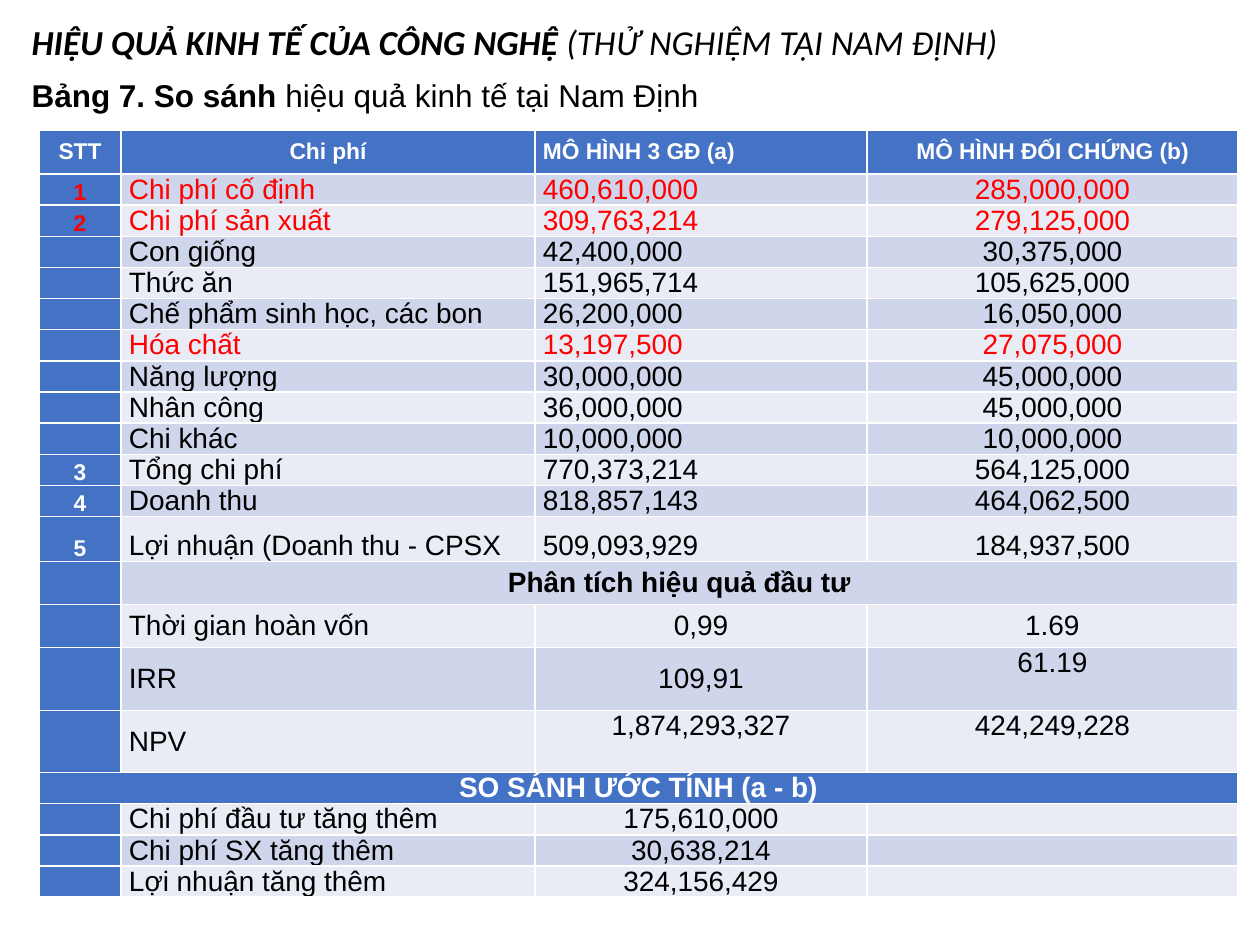
"""Builds the slide comparing the economic efficiency of two farming models."""
from lxml import etree
from pptx import Presentation
from pptx.dml.color import RGBColor
from pptx.enum.text import MSO_ANCHOR, MSO_AUTO_SIZE, PP_ALIGN
from pptx.oxml.ns import qn
from pptx.util import Emu, Pt

TOP, MIDDLE, BOTTOM = MSO_ANCHOR.TOP, MSO_ANCHOR.MIDDLE, MSO_ANCHOR.BOTTOM
LEFT, CENTER = PP_ALIGN.LEFT, PP_ALIGN.CENTER
PX = 914400 / 126
COLORS = {"black": "000000", "white": "FFFFFF", "red": "FF0000",
          "blue": "4472C4", "odd": "CFD5EA", "even": "E9EBF5"}

HEADINGS = [
    ("Calibri", 20, True, "HIỆU QUẢ KINH TẾ CỦA CÔNG NGHỆ ", "(THỬ NGHIỆM TẠI NAM ĐỊNH)"),
    ("Arial", 18, False, "Bảng 7. So sánh ", "hiệu quả kinh tế tại Nam Định"),
]
HEADER = ("STT", "Chi phí", "MÔ HÌNH 3 GĐ (a)", "MÔ HÌNH ĐỐI CHỨNG (b)")
COSTS = [
    ("1", "Chi phí cố định", "460,610,000", "285,000,000"),
    ("2", "Chi phí sản xuất", "309,763,214", "279,125,000"),
    ("", "Con giống", "42,400,000", "30,375,000"),
    ("", "Thức ăn", "151,965,714", "105,625,000"),
    ("", "Chế phẩm sinh học, các bon", "26,200,000", "16,050,000"),
    ("", "Hóa chất", "13,197,500", "27,075,000"),
    ("", "Năng lượng", "30,000,000", "45,000,000"),
    ("", "Nhân công", "36,000,000", "45,000,000"),
    ("", "Chi khác", "10,000,000", "10,000,000"),
    ("3", "Tổng chi phí", "770,373,214", "564,125,000"),
    ("4", "Doanh thu", "818,857,143", "464,062,500"),
    ("5", "Lợi nhuận (Doanh thu - CPSX", "509,093,929", "184,937,500"),
]
INVESTMENT = [
    ("", "Phân tích hiệu quả đầu tư", "", ""),
    ("", "Thời gian hoàn vốn", "0,99", "1.69"),
    ("", "IRR", "109,91", "61.19"),
    ("", "NPV", "1,874,293,327", "424,249,228"),
]
COMPARISON = [
    ("SO SÁNH ƯỚC TÍNH (a - b)", "", "", ""),
    ("", "Chi phí đầu tư tăng thêm", "175,610,000", ""),
    ("", "Chi phí SX tăng thêm", "30,638,214", ""),
    ("", "Lợi nhuận tăng thêm", "324,156,429", ""),
]
ROWS = [HEADER] + COSTS + INVESTMENT + COMPARISON
INVESTMENT_ROW = 1 + len(COSTS)
COMPARISON_ROW = INVESTMENT_ROW + len(INVESTMENT)
RED_LABELS = {"Chi phí cố định", "Chi phí sản xuất", "Hóa chất"}
TOP_VALUES = {"61.19", "1,874,293,327", "424,249,228"}
COLUMN_WIDTHS = [82, 414, 332, 371]
ROW_HEIGHTS = [44] + [31] * 11 + [45, 43, 43, 63, 62] + [31] * 4


def px(length):
    return Emu(round(length * PX))


def color(name):
    return RGBColor.from_string(COLORS[name])


def style_span(span, font, size, tone, bold, italic=False):
    span.font.name = font
    span.font.size = Pt(size)
    span.font.color.rgb = color(tone)
    span.font.bold = bold
    span.font.italic = italic


def add_headings(page):
    title = page.shapes.title
    title.element.getparent().remove(title.element)
    box = page.placeholders[1]
    box.left, box.top, box.width, box.height = px(19), px(19), px(1220), px(223)
    frame = box.text_frame
    frame.word_wrap = True
    frame.auto_size = MSO_AUTO_SIZE.NONE
    frame.vertical_anchor = TOP
    for index, (font, size, italic, strong, plain) in enumerate(HEADINGS):
        para = frame.add_paragraph() if index else frame.paragraphs[0]
        para.line_spacing = 0.9
        para.space_before = Pt(10)
        for text, bold in ((strong, True), (plain, False)):
            span = para.add_run()
            span.text = text
            style_span(span, font, size, "black", bold, italic)
        properties = para._p.get_or_add_pPr()
        properties.set("marL", "0")
        properties.set("indent", "0")
        etree.SubElement(properties, qn("a:buNone"))


def fill_cell(cell, row, column):
    text = ROWS[row][column]
    header, banner = row == 0, row == COMPARISON_ROW
    section = row == INVESTMENT_ROW
    on_blue = header or banner or column == 0
    cell.fill.solid()
    cell.fill.fore_color.rgb = color("blue" if on_blue else "odd" if row % 2 else "even")
    cell.margin_left = cell.margin_right = px(8)
    cell.margin_top = cell.margin_bottom = 0
    middle = header or INVESTMENT_ROW <= row < COMPARISON_ROW
    cell.vertical_anchor = TOP if text in TOP_VALUES else MIDDLE if middle else BOTTOM

    para = cell.text_frame.paragraphs[0]
    if not text:
        etree.SubElement(para._p, qn("a:endParaRPr")).set("sz", "1300")
        return
    para.text = text
    label = column == 1 and not header and not section
    first_model = column == 2 and row < INVESTMENT_ROW
    para.alignment = LEFT if label or first_model else CENTER
    tone = "red" if ROWS[row][1] in RED_LABELS else "white" if on_blue else "black"
    small = header or (column == 0 and not banner)
    style_span(para.runs[0], "Arial", 13 if small else 16, tone, on_blue or section)


def add_comparison_table(page):
    table = page.shapes.add_table(len(ROWS), len(HEADER), px(39), px(130),
                                  px(sum(COLUMN_WIDTHS)), px(sum(ROW_HEIGHTS))).table
    for column, width in zip(table.columns, COLUMN_WIDTHS):
        column.width = px(width)
    for row, height in zip(table.rows, ROW_HEIGHTS):
        row.height = px(height)
    for row in range(len(ROWS)):
        for column in range(len(HEADER)):
            fill_cell(table.cell(row, column), row, column)
    for row, first in ((INVESTMENT_ROW, 1), (COMPARISON_ROW, 0)):
        table.cell(row, first).merge(table.cell(row, len(HEADER) - 1))


def main():
    deck = Presentation()
    deck.slide_width, deck.slide_height = px(1260), px(945)
    page = deck.slides.add_slide(deck.slide_layouts[1])
    add_headings(page)
    add_comparison_table(page)
    deck.save("out.pptx")


if __name__ == "__main__":
    main()
